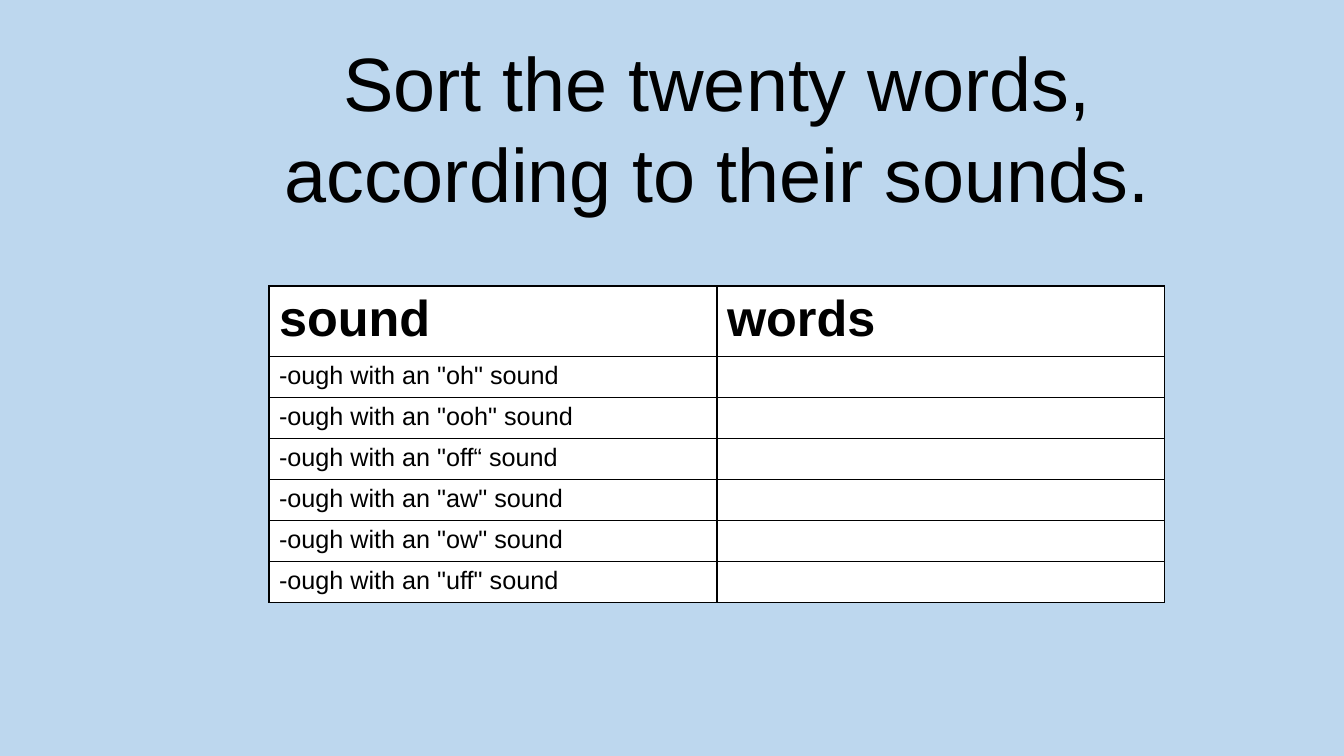
from lxml import etree
from pptx import Presentation
from pptx.dml.color import RGBColor
from pptx.enum.text import MSO_AUTO_SIZE, PP_ALIGN
from pptx.oxml.ns import qn
from pptx.util import Pt

CENTER = PP_ALIGN.CENTER
LEFT = PP_ALIGN.LEFT
GROW = MSO_AUTO_SIZE.SHAPE_TO_FIT_TEXT

EMU_PER_PX = 914400 / 100.8
BLANK_LAYOUT = 6
COLORS = {"background": "BDD7EE", "text": "000000", "cell": "FFFFFF", "border": "000000"}
FORMATS = {
    "title": {"size": Pt(54), "bold": False},
    "header": {"size": Pt(36), "bold": True},
    "body": {"size": Pt(18), "bold": False},
}
SOUNDS = ['"oh"', '"ooh"', '"off“', '"aw"', '"ow"', '"uff"']


def px(length):
    return round(length * EMU_PER_PX)


class SlideBuilder:
    """Holds the style and the current slide."""

    font_name = "Arial"

    def __init__(self, slide):
        self.slide = slide

    def color(self, name):
        return RGBColor.from_string(COLORS[name])

    def background(self):
        fill = self.slide.background.fill
        fill.solid()
        fill.fore_color.rgb = self.color("background")

    def add_text(self, text_frame, text, format_name, alignment=LEFT):
        paragraph = text_frame.paragraphs[0]
        paragraph.alignment = alignment
        run = paragraph.add_run()
        run.text = text
        values = {"name": self.font_name, **FORMATS[format_name]}
        for attribute, value in values.items():
            setattr(run.font, attribute, value)
        run.font.color.rgb = self.color("text")

    def title(self, left, top, width, height, text):
        text_frame = self.slide.shapes.add_textbox(
            px(left), px(top), px(width), px(height)).text_frame
        text_frame.word_wrap = True
        text_frame.auto_size = GROW
        self.add_text(text_frame, text, "title", CENTER)

    def cell_style(self, cell):
        # Borders come before the fill in the cell properties
        properties = cell._tc.get_or_add_tcPr()
        for side in ("lnL", "lnR", "lnT", "lnB"):
            line = etree.SubElement(properties, qn(f"a:{side}"), w=str(Pt(1)))
            solid = etree.SubElement(line, qn("a:solidFill"))
            etree.SubElement(solid, qn("a:srgbClr"), val=COLORS["border"])
        cell.fill.solid()
        cell.fill.fore_color.rgb = self.color("cell")

    def table(self, left, top, column_widths, row_heights, rows):
        table = self.slide.shapes.add_table(
            len(rows), len(column_widths), px(left), px(top),
            px(sum(column_widths)), px(sum(row_heights))).table
        for column, width in zip(table.columns, column_widths):
            column.width = px(width)
        for row, height in zip(table.rows, row_heights):
            row.height = px(height)
        for row_index, texts in enumerate(rows):
            format_name = "body" if row_index else "header"
            for column_index, text in enumerate(texts):
                cell = table.cell(row_index, column_index)
                self.cell_style(cell)
                if text:
                    self.add_text(cell.text_frame, text, format_name)


def main():
    presentation = Presentation()
    presentation.slide_width = px(1344)
    presentation.slide_height = px(756)
    slide = presentation.slides.add_slide(presentation.slide_layouts[BLANK_LAYOUT])
    builder = SlideBuilder(slide)

    # Background and title
    builder.background()
    builder.title(181, 31, 1072, 194, "Sort the twenty words, according to their sounds.")

    # Sorting table with an empty column for the answers
    rows = [("sound", "words")]
    rows += [(f"-ough with an {sound} sound", "") for sound in SOUNDS]
    builder.table(269, 286, [448, 448], [70] + [41] * len(SOUNDS), rows)

    presentation.save("out.pptx")


if __name__ == "__main__":
    main()
